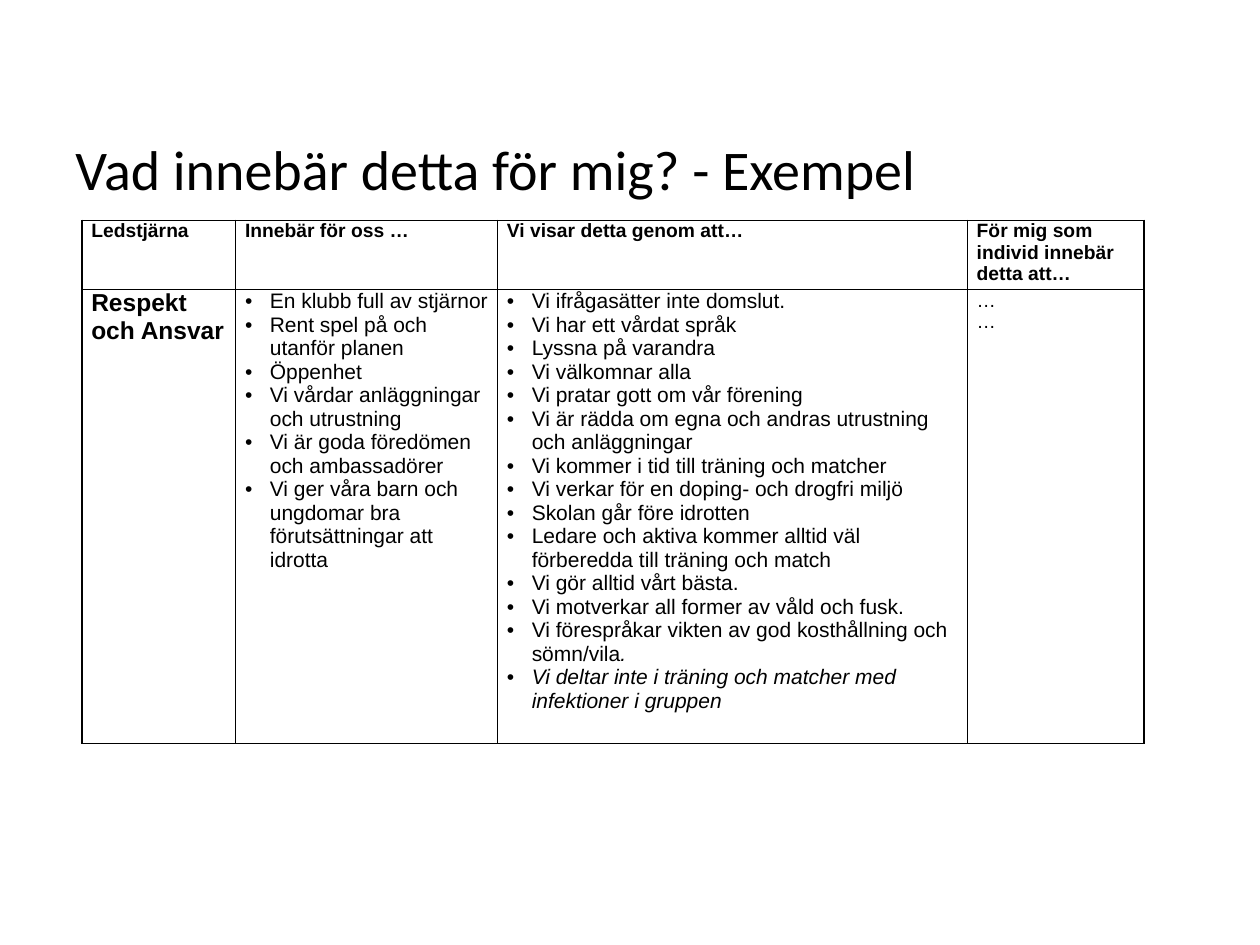
import pptx
import pptx.enum.text
import pptx.util
import pptx.dml.color
import pptx.oxml.ns
import lxml.etree
from pptx.util import Cm

COLORS = {"text": "000000", "border": "000000", "background": "FFFFFF"}

COLUMN_WIDTHS = [3.1, 5.28, 9.47, 3.56]
ROW_HEIGHTS = [1.31, 8.53]

HEADINGS = [
    "Ledstjärna",
    "Innebär för oss …",
    "Vi visar detta genom att…",
    "För mig som individ innebär detta att…",
]
MEANINGS = [
    "En klubb full av stjärnor",
    "Rent spel på och utanför planen",
    "Öppenhet",
    "Vi vårdar anläggningar och utrustning",
    "Vi är goda föredömen och ambassadörer",
    "Vi ger våra barn och ungdomar bra förutsättningar att idrotta",
]
# A paragraph is a string, or a list of (text, italic) runs
ACTIONS = [
    "Vi ifrågasätter inte domslut.",
    "Vi har ett vårdat språk",
    "Lyssna på varandra",
    "Vi välkomnar alla",
    "Vi pratar gott om vår förening",
    "Vi är rädda om egna och andras utrustning och anläggningar",
    "Vi kommer i tid till träning och matcher",
    "Vi verkar för en doping- och drogfri miljö",
    "Skolan går före idrotten",
    "Ledare och aktiva kommer alltid väl förberedda till träning och match",
    "Vi gör alltid vårt bästa.",
    "Vi motverkar all former av våld och fusk.",
    [("Vi förespråkar vikten av god kosthållning och sömn/vila", False), (".", True)],
    [("Vi deltar inte i träning och matcher med infektioner i gruppen", True)],
]


def rgb(name):
    return pptx.dml.color.RGBColor.from_string(COLORS[name])


def add_child(parent, tag, **attributes):
    child = lxml.etree.SubElement(parent, pptx.oxml.ns.qn(tag))
    for name, value in attributes.items():
        child.set(name, str(value))
    return child


def write_text(text_frame, paragraphs, font="Arial", size=12, bold=False, bullet=False):
    for index, content in enumerate(paragraphs):
        paragraph = text_frame.paragraphs[0] if index == 0 else text_frame.add_paragraph()
        if bullet:
            properties = paragraph._p.get_or_add_pPr()
            properties.set("marL", str(Cm(0.5)))
            properties.set("indent", str(-Cm(0.5)))
            add_child(properties, "a:buFont", typeface="Arial")
            add_child(properties, "a:buChar", char="•")
        runs = [(content, False)] if isinstance(content, str) else content
        for text, italic in runs:
            run = paragraph.add_run()
            run.text = text
            run.font.name = font
            run.font.size = pptx.util.Pt(size)
            run.font.bold = bold
            run.font.italic = italic
            run.font.color.rgb = rgb("text")


class SlideBuilder:
    """Holds the table style and the current slide."""

    border_width = pptx.util.Pt(1)
    side_margin = Cm(0.19)

    def __init__(self, slide):
        self.slide = slide
        slide.background.fill.solid()
        slide.background.fill.fore_color.rgb = rgb("background")

    def title(self, text, left, top, width, height):
        shape = self.slide.shapes.add_textbox(Cm(left), Cm(top), Cm(width), Cm(height))
        shape.text_frame.word_wrap = True
        shape.text_frame.vertical_anchor = pptx.enum.text.MSO_ANCHOR.MIDDLE
        write_text(shape.text_frame, [text], font="Calibri", size=32)

    def table(self, left, top, column_widths, row_heights):
        shape = self.slide.shapes.add_table(
            len(row_heights), len(column_widths), Cm(left), Cm(top),
            Cm(sum(column_widths)), Cm(sum(row_heights)))
        table = shape.table
        table.first_row = table.horz_banding = False
        for column, width in zip(table.columns, column_widths):
            column.width = Cm(width)
        for row, height in zip(table.rows, row_heights):
            row.height = Cm(height)
        return table

    def cell(self, cell, paragraphs, **text_format):
        cell.margin_left = cell.margin_right = self.side_margin
        cell.margin_top = cell.margin_bottom = 0
        properties = cell._tc.get_or_add_tcPr()
        for side in ("a:lnL", "a:lnR", "a:lnT", "a:lnB"):
            line = add_child(properties, side, w=self.border_width)
            fill = add_child(line, "a:solidFill")
            add_child(fill, "a:srgbClr", val=COLORS["border"])
        cell.fill.background()
        write_text(cell.text_frame, paragraphs, **text_format)


def main():
    presentation = pptx.Presentation()
    presentation.slide_width = Cm(25.4)
    presentation.slide_height = Cm(19.05)
    builder = SlideBuilder(presentation.slides.add_slide(presentation.slide_layouts[6]))

    # Title
    builder.title("Vad innebär detta för mig? - Exempel", 1.27, 2.34, 22.86, 2.11)

    # Table: heading row, then the guiding star with its lists
    table = builder.table(1.65, 4.44, COLUMN_WIDTHS, ROW_HEIGHTS)
    for column, heading in enumerate(HEADINGS):
        builder.cell(table.cell(0, column), [heading], size=11, bold=True)
    builder.cell(table.cell(1, 0), ["Respekt och Ansvar"], size=14, bold=True)
    builder.cell(table.cell(1, 1), MEANINGS, bullet=True)
    builder.cell(table.cell(1, 2), ACTIONS, bullet=True)
    builder.cell(table.cell(1, 3), ["…", "…"], size=11)

    presentation.save("out.pptx")


if __name__ == "__main__":
    main()
